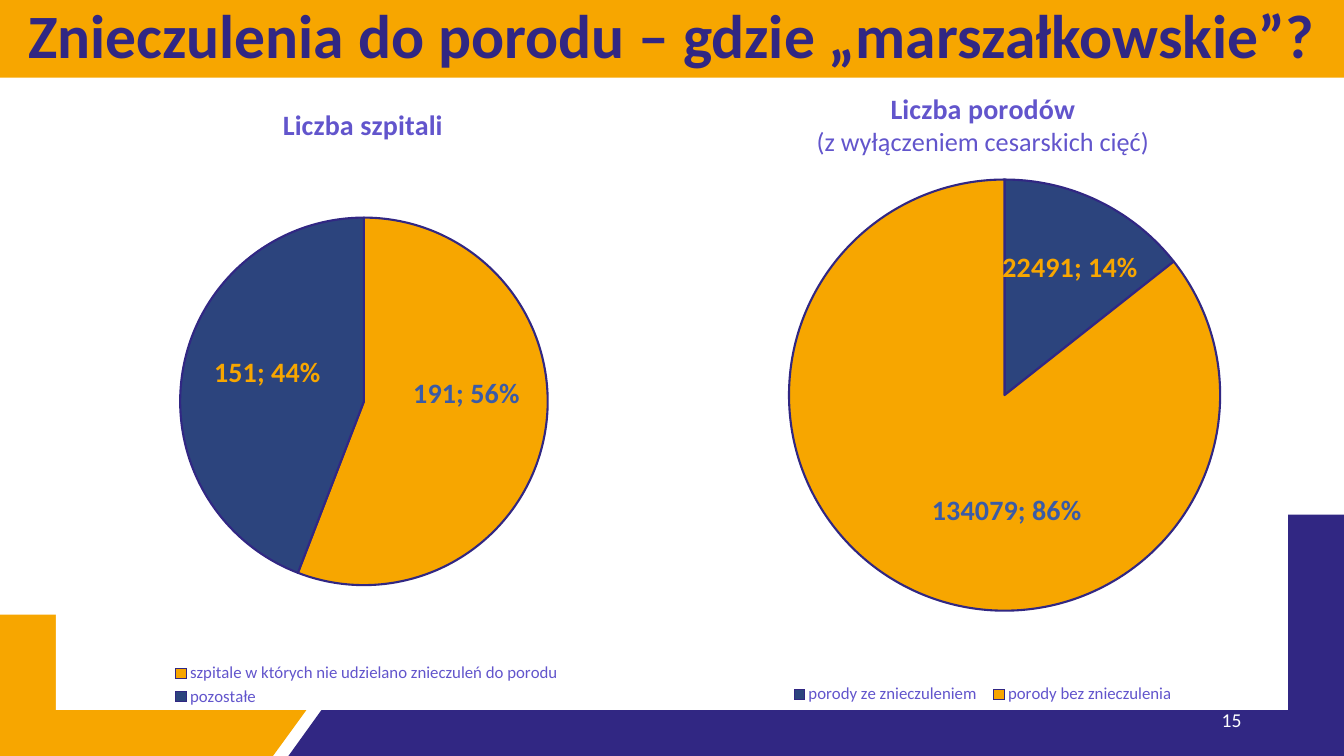
from dataclasses import dataclass

from lxml.etree import SubElement
from pptx import Presentation
from pptx.chart.chart import Chart
from pptx.chart.data import CategoryChartData
from pptx.dml.color import RGBColor
from pptx.dml.fill import FillFormat
from pptx.enum.chart import XL_CHART_TYPE, XL_LABEL_POSITION, XL_LEGEND_POSITION
from pptx.enum.shapes import MSO_SHAPE
from pptx.enum.text import MSO_ANCHOR, PP_ALIGN
from pptx.oxml import parse_xml
from pptx.oxml.ns import nsdecls, qn
from pptx.oxml.xmlchemy import BaseOxmlElement
from pptx.shapes.autoshape import Shape
from pptx.slide import Slide
from pptx.text.text import Font
from pptx.util import Pt

NAVY, GOLD, BLUE, INK, LILAC, WHITE = (
    "312783", "F7A600", "2C447D", "3A5BA7", "6255CC", "FFFFFF")
LABEL_BOX = f"""<c:extLst {nsdecls('c')}>
  <c:ext uri="{{CE6537A1-D6FC-4f65-9D91-7224C49458BB}}"
      xmlns:c15="http://schemas.microsoft.com/office/drawing/2012/chart">
    <c15:layout><c:manualLayout>
      <c:w val="0.19"/><c:h val="0.12"/>
    </c:manualLayout></c15:layout>
  </c:ext>
</c:extLst>"""


@dataclass
class Slice:
    name: str
    value: int
    fill: str
    ink: str
    shift: tuple[float, float]


@dataclass
class Line:
    text: str
    size: float
    bold: bool


@dataclass
class Pie:
    left: float
    title: list[Line]
    slices: list[Slice]
    head: tuple[float, float]
    plot: tuple[float, float, float, float]
    legend: tuple[float, float, float, float]


PIES = [
    Pie(40, [Line("Liczba szpitali", 20, True)],
        [Slice("szpitale w których nie udzielano znieczuleń do porodu", 191,
               GOLD, INK, (0.02, -0.04)),
         Slice("pozostałe", 151, BLUE, GOLD, (-0.01, -0.02))],
        (0.36, 0.02), (0.2, 0.21, 0.6, 0.59), (0.18, 0.92, 0.65, 0.08)),
    Pie(480, [Line("Liczba porodów", 20, True),
              Line("(z wyłączeniem cesarskich cięć)", 18.7, False)],
        [Slice("porody ze znieczuleniem", 22491, BLUE, GOLD, (0.03, -0.05)),
         Slice("porody bez znieczulenia", 134079, GOLD, INK, (0.08, 0.03))],
        (0.23, 0), (0.19, 0.14, 0.7, 0.71), (0.18, 0.95, 0.65, 0.05)),
]


def rgb(code: str) -> RGBColor:
    return RGBColor.from_string(code)


def paint(fill: FillFormat, code: str) -> None:
    fill.solid()
    fill.fore_color.rgb = rgb(code)


def style(font: Font, size: float, code: str, bold: bool = False) -> None:
    font.name, font.size, font.bold = "Calibri", Pt(size), bold
    font.color.rgb = rgb(code)


def clean(shape: Shape, code: str) -> None:
    """Give a shape a flat fill, without line or shadow."""
    paint(shape.fill, code)
    shape.line.fill.background()
    shape.shadow.inherit = False


def block(slide: Slide, code: str, points: list[tuple[float, float]]) -> None:
    """Draw a closed corner block."""
    pen = slide.shapes.build_freeform(
        Pt(points[0][0]), Pt(points[0][1]), scale=1.0)
    pen.add_line_segments([(Pt(x), Pt(y)) for x, y in points[1:]])
    clean(pen.convert_to_shape(), code)


def write(shape: Shape, text: str, size: float, code: str, bold: bool,
          align: PP_ALIGN) -> None:
    frame = shape.text_frame
    frame.word_wrap = True
    frame.vertical_anchor = MSO_ANCHOR.MIDDLE
    para = frame.paragraphs[0]
    para.text, para.alignment, para.line_spacing = text, align, 0.9
    style(para.font, size, code, bold)


def place(node: BaseOxmlElement, index: int, area: tuple[float, ...],
          edge: bool = True, inner: bool = False) -> None:
    """Set a manual layout, as shares of the chart, as child number index."""
    old = node.find(qn("c:layout"))
    if old is not None:
        node.remove(old)
    layout = parse_xml(f"<c:layout {nsdecls('c')}><c:manualLayout/></c:layout>")
    rules = [("layoutTarget", "inner")] if inner else []
    if edge:
        rules += [("xMode", "edge"), ("yMode", "edge")]
    rules += zip("xywh", area)
    for tag, value in rules:
        SubElement(layout[0], qn(f"c:{tag}")).set("val", str(value))
    node.insert(index, layout)


def label(chart: Chart, pie: Pie) -> None:
    """Colour the slices and show value and percentage on each."""
    series = chart.plots[0].series[0]
    for i, part in enumerate(pie.slices):
        point = series.points[i]
        paint(point.format.fill, part.fill)
        point.format.line.color.rgb = rgb(NAVY)
        point.format.line.width = Pt(1.5)
        style(point.data_label.font, 20, part.ink, True)
        point.data_label.position = XL_LABEL_POSITION.CENTER
    for node, part in zip(chart.element.iter(qn("c:dLbl")), pie.slices):
        place(node, 1, part.shift, edge=False)
        for body in node.iter(qn("a:bodyPr")):
            body.set("wrap", "square")
        node.find(qn("c:showPercent")).set("val", "1")
        SubElement(node, qn("c:separator")).text = "; "
        node.append(parse_xml(LABEL_BOX))


def draw(slide: Slide, pie: Pie) -> None:
    data = CategoryChartData()
    data.categories = [part.name for part in pie.slices]
    data.add_series("Series 1", [part.value for part in pie.slices])
    chart = slide.shapes.add_chart(
        XL_CHART_TYPE.PIE, Pt(pie.left), Pt(62), Pt(440), Pt(445), data).chart
    style(chart.font, 10, NAVY)
    chart.plots[0].vary_by_categories = True

    frame = chart.chart_title.text_frame
    for i, line in enumerate(pie.title):
        para = frame.add_paragraph() if i else frame.paragraphs[0]
        para.text, para.alignment = line.text, PP_ALIGN.CENTER
        style(para.font, line.size, LILAC, line.bold)

    chart.has_legend = True
    chart.legend.position = XL_LEGEND_POSITION.BOTTOM
    chart.legend.include_in_layout = False
    style(chart.legend.font, 12, LILAC)
    label(chart, pie)

    root = chart.element.find(qn("c:chart"))
    place(root.find(qn("c:title")), 1, pie.head)
    place(root.find(qn("c:plotArea")), 0, pie.plot, inner=True)
    place(root.find(qn("c:legend")), 1, pie.legend)
    root.addnext(parse_xml(
        f"<c:spPr {nsdecls('c', 'a')}><a:solidFill><a:srgbClr val='{WHITE}'/>"
        "</a:solidFill><a:ln><a:noFill/></a:ln></c:spPr>"))


def main() -> None:
    deck = Presentation()
    deck.slide_width, deck.slide_height = Pt(960), Pt(540)
    slide = deck.slides.add_slide(deck.slide_layouts[6])

    block(slide, NAVY, [(206, 540), (330, 367.5), (960, 367.5), (960, 540)])
    block(slide, GOLD, [(0, 439), (268.5, 439), (195, 540), (0, 540)])

    title = slide.shapes.add_shape(
        MSO_SHAPE.RECTANGLE, Pt(0), Pt(0), Pt(960), Pt(55.5))
    clean(title, GOLD)
    write(title, "Znieczulenia do porodu – gdzie „marszałkowskie”?",
          44, NAVY, True, PP_ALIGN.CENTER)
    number = slide.shapes.add_textbox(Pt(678), Pt(500.5), Pt(216), Pt(29))
    write(number, "15", 14, WHITE, False, PP_ALIGN.RIGHT)

    for pie in PIES:
        draw(slide, pie)
    deck.save("out.pptx")


if __name__ == "__main__":
    main()
